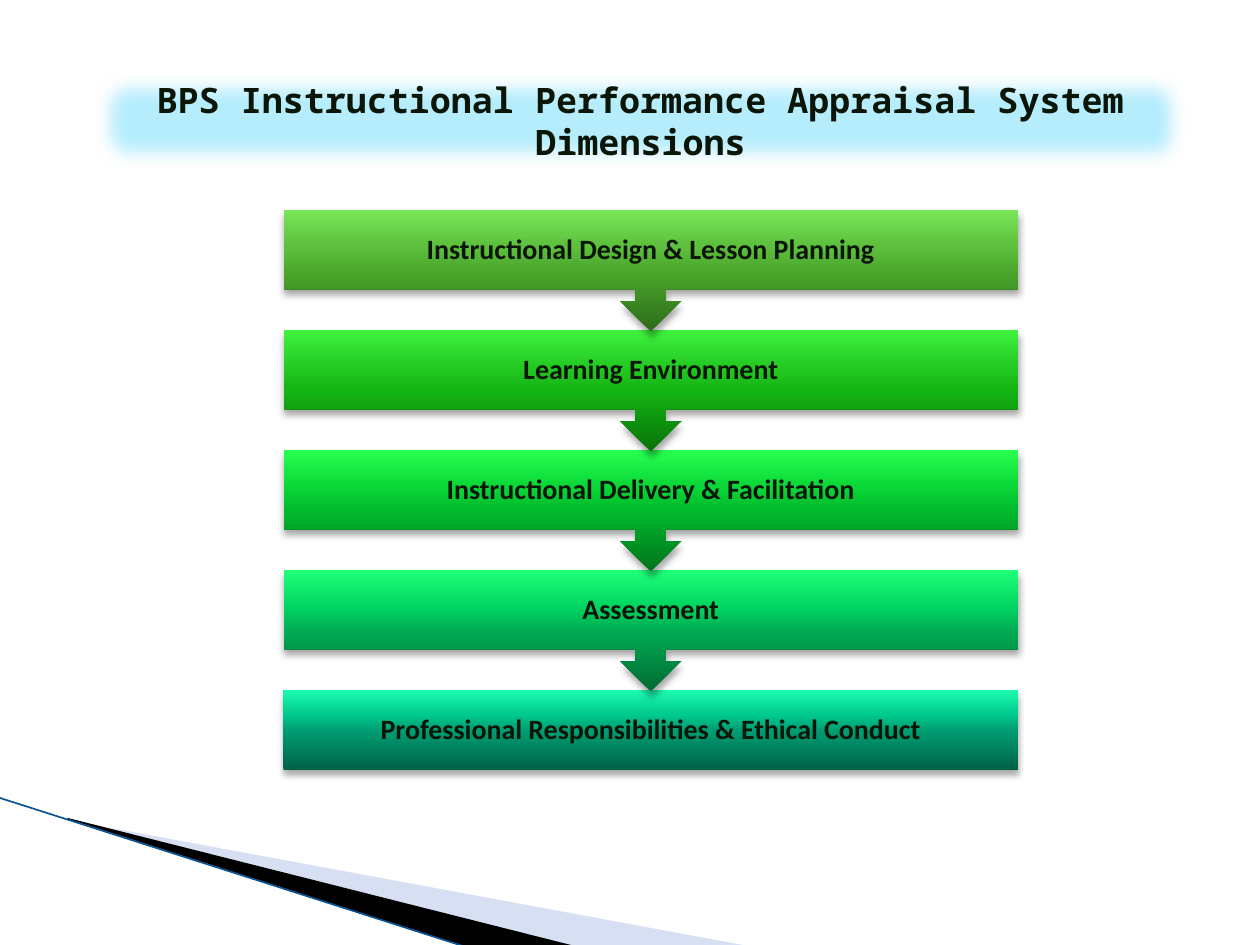
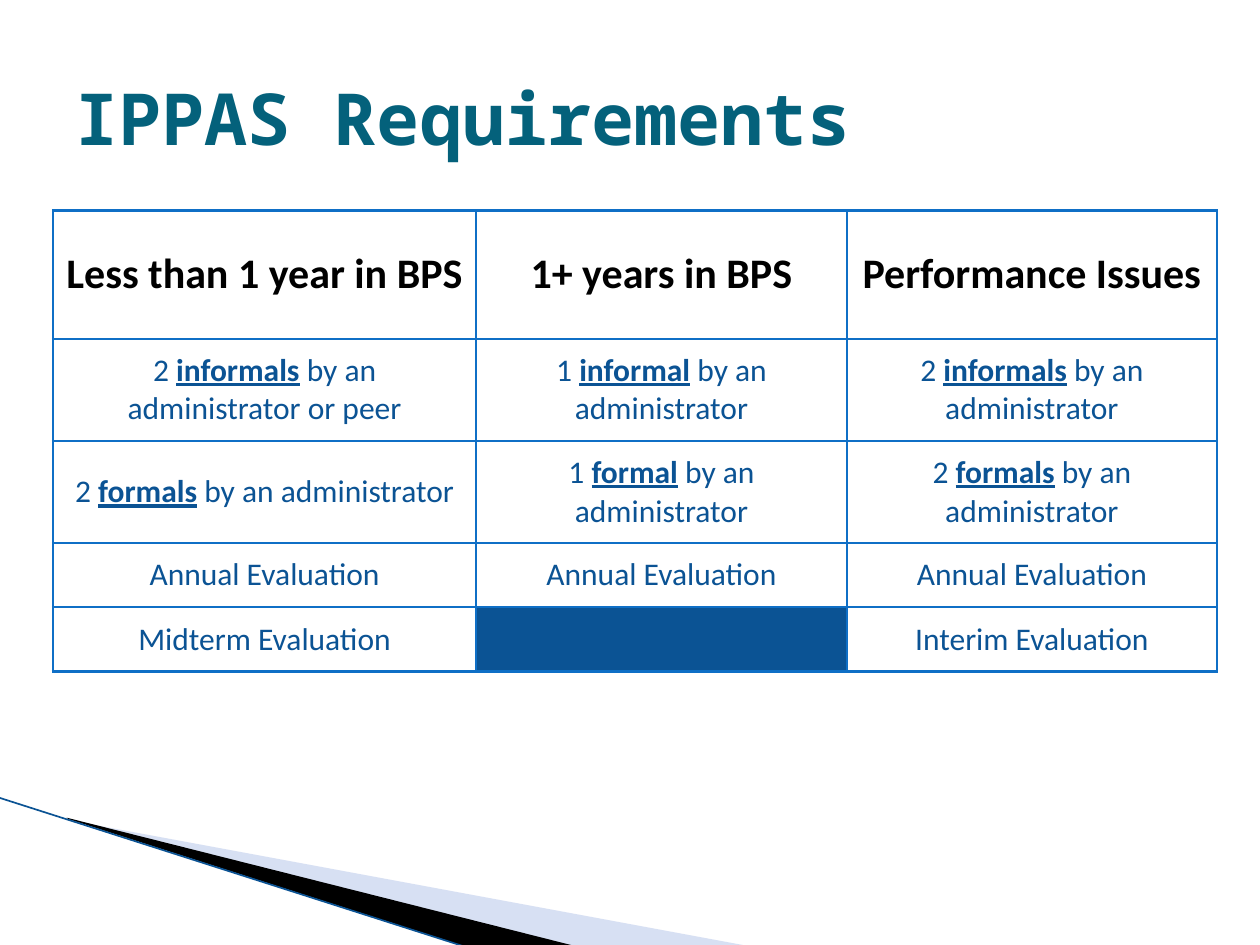
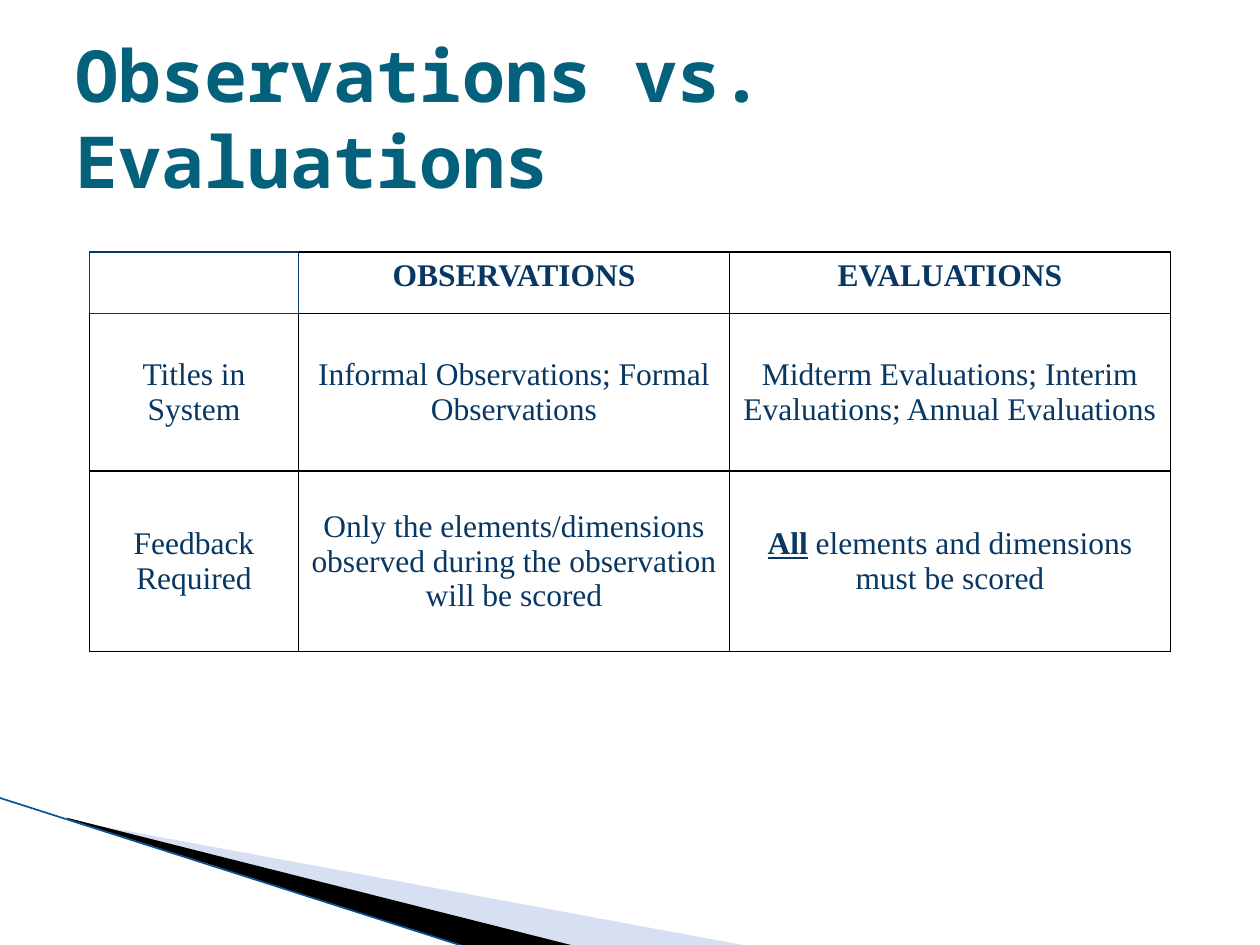
from dataclasses import dataclass, field

from lxml.etree import SubElement
from pptx import Presentation
from pptx.dml.color import RGBColor
from pptx.enum.shapes import MSO_CONNECTOR as Connector
from pptx.enum.shapes import MSO_SHAPE as Preset
from pptx.enum.text import MSO_ANCHOR as Anchor
from pptx.enum.text import PP_ALIGN as Align
from pptx.oxml.ns import qn
from pptx.shapes.autoshape import Shape
from pptx.slide import Slide
from pptx.util import Emu, Inches, Pt

WHITE = RGBColor(0xFF, 0xFF, 0xFF)
BLACK = RGBColor(0x00, 0x00, 0x00)
PALE_BLUE = RGBColor(0x9D, 0xB2, 0xE1)
BLUE = RGBColor(0x0B, 0x53, 0x94)
GRID_BLUE = RGBColor(0x0F, 0x6F, 0xC6)
NAVY = RGBColor(0x08, 0x37, 0x63)
TITLE_TEAL = RGBColor(0x04, 0x61, 0x7B)
BANNER_BLUE = RGBColor(0xB5, 0xED, 0xFD)
INK = RGBColor(0x0B, 0x16, 0x08)

TITLE_FONT = "Noto Sans Mono"
BODY_FONT = "Calibri"
SERIF_FONT = "Times New Roman"

GRADIENT_STOPS = (0, 50, 70, 100)
STEP_LEFT, STEP_WIDTH = 2.25, 5.83
FIRST_STEP_TOP, LAST_STEP_TOP = 1.67, 5.48
BOX_HEIGHT, CALLOUT_HEIGHT = 0.63, 0.96


@dataclass(frozen=True)
class TextStyle:
    font: str
    size: float
    color: RGBColor
    bold: bool = False


@dataclass(frozen=True)
class Step:
    label: str
    colors: tuple[str, str, str, str]


@dataclass(frozen=True)
class Wedge:
    points: tuple[tuple[float, float], ...]
    color: RGBColor
    opacity: int = 100


@dataclass(frozen=True)
class Grid:
    left: float
    top: float
    columns: tuple[float, ...]
    rows: tuple[float, ...]
    cells: tuple[tuple[str, ...], ...]
    header: TextStyle
    body: TextStyle
    border: RGBColor
    border_width: float
    vertical_margin: float
    header_anchor: Anchor
    fill: RGBColor | None = None
    cell_fills: dict[tuple[int, int], RGBColor] = field(default_factory=dict)
    edge_colors: dict[tuple[int, int, str], RGBColor] = field(default_factory=dict)


TITLE_STYLE = TextStyle(TITLE_FONT, 41, TITLE_TEAL, True)
BANNER_STYLE = TextStyle(TITLE_FONT, 20, INK, True)
STEP_STYLE = TextStyle(BODY_FONT, 16, INK, True)

WEDGES = (
    Wedge(((0.55, 6.51), (5.95, 7.51), (4.56, 7.51), (0.55, 6.5)), PALE_BLUE, 40),
    Wedge(((0.53, 6.49), (4.57, 7.51), (3.72, 7.52), (0.54, 6.5)), BLACK),
)

STEPS = (
    Step("Instructional Design & Lesson Planning", ("2D6B19", "4BA82C", "5DBF3D", "78E657")),
    Step("Learning Environment", ("097209", "13B413", "24CA23", "3EF23D")),
    Step("Instructional Delivery & Facilitation", ("00731B", "00B92C", "0AD737", "27FF4F")),
    Step("Assessment", ("006A33", "00AB53", "00D561", "1FFF79")),
    Step("Professional Responsibilities & Ethical Conduct", ("006247", "009E73", "00CB8E", "1CF9AE")),
)

REQUIREMENTS = Grid(
    left=0.42,
    top=1.67,
    columns=(3.36, 2.94, 2.94),
    rows=(1.02, 0.81, 0.81, 0.51, 0.51),
    cells=(
        ("Less than 1 year in BPS", "1+ years in BPS", "Performance Issues"),
        (
            "2 *informals* by an administrator or peer",
            "1 *informal* by an administrator",
            "2 *informals* by an administrator",
        ),
        (
            "2 *formals* by an administrator",
            "1 *formal* by an administrator",
            "2 *formals* by an administrator",
        ),
        ("Annual Evaluation",) * 3,
        ("Midterm Evaluation", "", "Interim Evaluation"),
    ),
    header=TextStyle(BODY_FONT, 24, BLACK, True),
    body=TextStyle(BODY_FONT, 18, BLUE),
    border=GRID_BLUE,
    border_width=1.5,
    vertical_margin=0.1,
    header_anchor=Anchor.MIDDLE,
    cell_fills={(4, 1): BLUE},
)

COMPARISON = Grid(
    left=0.71,
    top=2,
    columns=(1.66, 3.42, 3.5),
    rows=(0.49, 1.25, 1.43),
    cells=(
        ("", "OBSERVATIONS", "EVALUATIONS"),
        (
            "Titles in System",
            "Informal Observations; Formal Observations",
            "Midterm Evaluations; Interim Evaluations; Annual Evaluations",
        ),
        (
            "Feedback Required",
            "Only the elements/dimensions observed during the observation will be scored",
            "*All* elements and dimensions must be scored",
        ),
    ),
    header=TextStyle(SERIF_FONT, 18, NAVY, True),
    body=TextStyle(SERIF_FONT, 18, NAVY),
    border=BLACK,
    border_width=1,
    vertical_margin=0.05,
    header_anchor=Anchor.TOP,
    fill=WHITE,
    edge_colors={
        **{(0, 0, side): NAVY for side in "LRTB"},
        (0, 1, "L"): NAVY,
        (1, 0, "T"): NAVY,
    },
)


def apply_style(font, style: TextStyle) -> None:
    font.name = style.font
    font.size = Pt(style.size)
    font.bold = style.bold
    font.color.rgb = style.color


def write_line(shape: Shape, text: str, style: TextStyle, alignment: Align) -> None:
    frame = shape.text_frame
    frame.word_wrap = True
    frame.vertical_anchor = Anchor.MIDDLE
    frame.text = text
    paragraph = frame.paragraphs[0]
    paragraph.alignment = alignment
    apply_style(paragraph.runs[0].font, style)


def write_marked(paragraph, text: str, style: TextStyle) -> None:
    paragraph.alignment = Align.CENTER
    apply_style(paragraph.font, style)
    for position, part in enumerate(text.split("*")):
        if part:
            run = paragraph.add_run()
            run.text = part
            apply_style(run.font, style)
            if position % 2:
                run.font.bold = run.font.underline = True


def add_wedge(slide: Slide, wedge: Wedge) -> None:
    points = [(Inches(x), Inches(y)) for x, y in wedge.points]
    builder = slide.shapes.build_freeform(*points[0], scale=1.0)
    builder.add_line_segments(points[1:], close=True)
    shape = builder.convert_to_shape()
    shape.shadow.inherit = False
    shape.line.fill.background()
    shape.fill.solid()
    shape.fill.fore_color.rgb = wedge.color
    if wedge.opacity < 100:
        color = shape.element.spPr.find(qn("a:solidFill"))[0]
        SubElement(color, qn("a:alpha"), val=str(wedge.opacity * 1000))


def add_base_slide(presentation) -> Slide:
    slide = presentation.slides.add_slide(presentation.slide_layouts[6])
    for wedge in WEDGES:
        add_wedge(slide, wedge)
    edge = slide.shapes.add_connector(
        Connector.STRAIGHT, Inches(-0.01), Inches(6.33), Inches(3.71), Inches(7.52)
    )
    edge.line.color.rgb = BLUE
    edge.line.width = Pt(0.95)
    SubElement(edge.element.spPr, qn("a:effectLst"))
    return slide


def add_title(slide: Slide, text: str) -> None:
    title = slide.shapes.add_textbox(Inches(0.5), Inches(0.3), Inches(9), Inches(1.25))
    write_line(title, text, TITLE_STYLE, Align.LEFT)


def add_banner(slide: Slide, text: str) -> None:
    banner = slide.shapes.add_shape(
        Preset.ROUNDED_RECTANGLE, Inches(0.75), Inches(0.58), Inches(8.67), Inches(0.75)
    )
    banner.shadow.inherit = False
    banner.fill.solid()
    banner.fill.fore_color.rgb = BANNER_BLUE
    banner.line.fill.background()
    effects = banner.element.spPr.find(qn("a:effectLst"))
    SubElement(effects, qn("a:softEdge"), rad=str(Inches(0.14)))
    write_line(banner, text, BANNER_STYLE, Align.CENTER)


def set_gradient(shape: Shape, colors: tuple[str, ...]) -> None:
    shape.fill.gradient()
    shape.fill.gradient_angle = 90
    gradient = shape.element.spPr.find(qn("a:gradFill"))
    gradient.set("rotWithShape", "0")
    stops = gradient.find(qn("a:gsLst"))
    for stop in list(stops):
        stops.remove(stop)
    for position, color in zip(GRADIENT_STOPS, colors):
        stop = SubElement(stops, qn("a:gs"), pos=str(position * 1000))
        SubElement(stop, qn("a:srgbClr"), val=color)


def add_drop_shadow(shape: Shape) -> None:
    shape.shadow.inherit = False
    effects = shape.element.spPr.find(qn("a:effectLst"))
    shadow = SubElement(
        effects, qn("a:outerShdw"), blurRad=str(Pt(4)), dist=str(Pt(3)), dir="5400000", rotWithShape="0"
    )
    color = SubElement(shadow, qn("a:srgbClr"), val=str(BLACK))
    SubElement(color, qn("a:alpha"), val="35000")


def add_step(slide: Slide, step: Step, top: float, is_last: bool) -> None:
    left, width = Inches(STEP_LEFT), Inches(STEP_WIDTH)
    preset = Preset.RECTANGLE if is_last else Preset.UP_ARROW_CALLOUT
    height = BOX_HEIGHT if is_last else CALLOUT_HEIGHT
    box = slide.shapes.add_shape(preset, left, Inches(top), width, Inches(height))
    box.rotation = 0 if is_last else 180
    box.line.fill.background()
    set_gradient(box, step.colors)
    add_drop_shadow(box)

    label = slide.shapes.add_textbox(left, Inches(top), width, Inches(BOX_HEIGHT))
    write_line(label, step.label, STEP_STYLE, Align.CENTER)
    frame = label.text_frame
    frame.margin_left = frame.margin_right = Inches(0.12)
    frame.margin_top = frame.margin_bottom = Inches(0.12)
    frame.paragraphs[0].line_spacing = 0.9


def set_border(cell, side: str, color: RGBColor, width: float) -> None:
    properties = cell._tc.get_or_add_tcPr()
    line = SubElement(properties, qn(f"a:ln{side}"), w=str(Pt(width)))
    fill = SubElement(line, qn("a:solidFill"))
    SubElement(fill, qn("a:srgbClr"), val=str(color))


def add_grid(slide: Slide, grid: Grid) -> None:
    frame = slide.shapes.add_table(
        len(grid.rows),
        len(grid.columns),
        Inches(grid.left),
        Inches(grid.top),
        Emu(sum(Inches(width) for width in grid.columns)),
        Emu(sum(Inches(height) for height in grid.rows)),
    )
    table = frame.table
    table.first_row = table.horz_banding = False
    for column, width in zip(table.columns, grid.columns):
        column.width = Inches(width)
    for row_index, (row, height) in enumerate(zip(table.rows, grid.rows)):
        row.height = Inches(height)
        for column_index, cell in enumerate(row.cells):
            place = (row_index, column_index)
            for side in "LRTB":
                color = grid.edge_colors.get((*place, side), grid.border)
                set_border(cell, side, color, grid.border_width)
            fill = grid.cell_fills.get(place, grid.fill)
            if fill is None:
                cell.fill.background()
            else:
                cell.fill.solid()
                cell.fill.fore_color.rgb = fill
            cell.margin_left = cell.margin_right = Inches(0.1)
            cell.margin_top = cell.margin_bottom = Inches(grid.vertical_margin)
            is_header = row_index == 0
            cell.vertical_anchor = grid.header_anchor if is_header else Anchor.MIDDLE
            style = grid.header if is_header else grid.body
            write_marked(cell.text_frame.paragraphs[0], grid.cells[row_index][column_index], style)


def build_dimensions(presentation) -> None:
    slide = add_base_slide(presentation)
    add_banner(slide, "BPS Instructional Performance Appraisal System Dimensions")
    last = len(STEPS) - 1
    pitch = (LAST_STEP_TOP - FIRST_STEP_TOP) / last
    for index in range(last, -1, -1):
        add_step(slide, STEPS[index], FIRST_STEP_TOP + index * pitch, index == last)


def build_table_slide(presentation, title: str, grid: Grid) -> None:
    slide = add_base_slide(presentation)
    add_title(slide, title)
    add_grid(slide, grid)


def main() -> None:
    presentation = Presentation()
    presentation.slide_width = Inches(10)
    presentation.slide_height = Inches(7.5)
    build_dimensions(presentation)
    build_table_slide(presentation, "IPPAS Requirements", REQUIREMENTS)
    build_table_slide(presentation, "Observations vs. Evaluations", COMPARISON)
    presentation.save("out.pptx")


if __name__ == "__main__":
    main()
